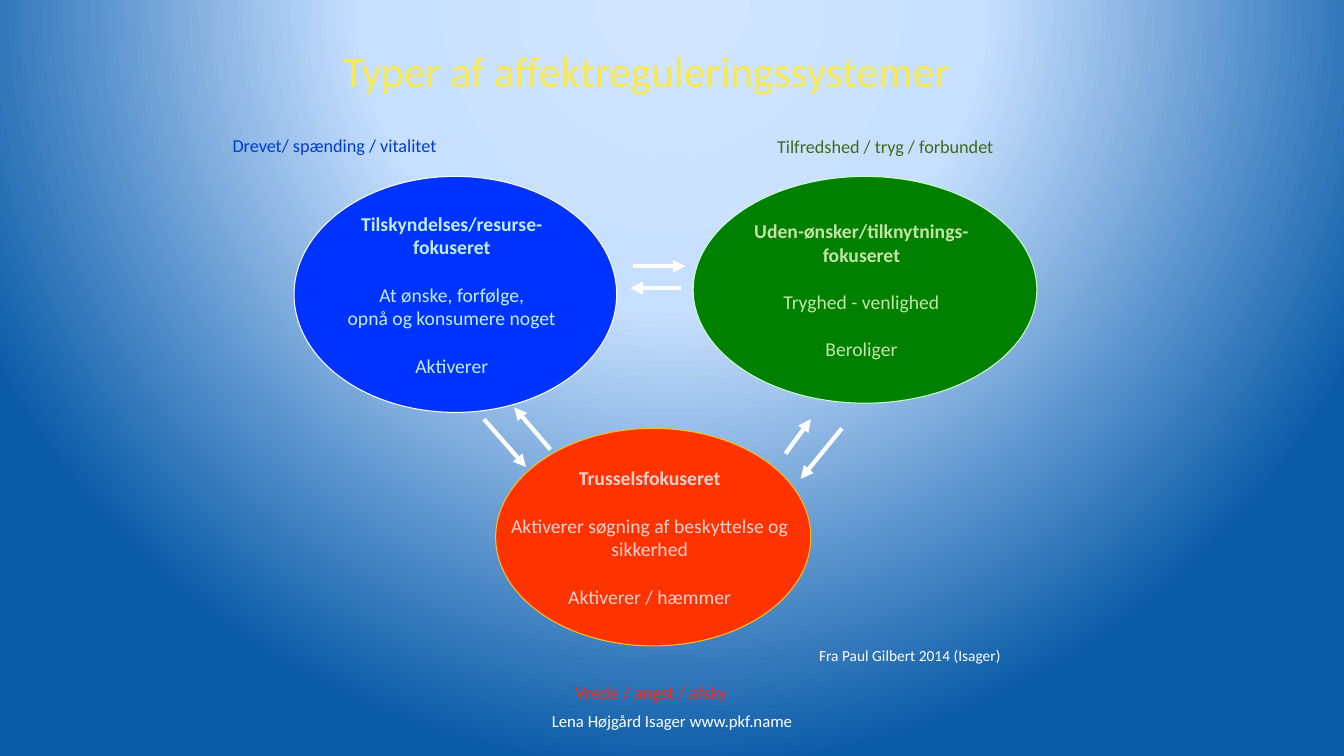
"""Build a slide of three affect regulation systems linked by arrows."""
from dataclasses import dataclass

from pptx import Presentation
from pptx.dml.color import RGBColor
from pptx.enum.shapes import MSO_CONNECTOR, MSO_SHAPE
from pptx.enum.text import MSO_ANCHOR, MSO_AUTO_SIZE, PP_ALIGN
from pptx.oxml import parse_xml
from pptx.oxml.ns import nsdecls
from pptx.oxml.xmlchemy import OxmlElement
from pptx.shapes.connector import Connector
from pptx.slide import Slide
from pptx.text.text import TextFrame, _Paragraph
from pptx.util import Inches, Pt

OVAL, STRAIGHT = MSO_SHAPE.OVAL, MSO_CONNECTOR.STRAIGHT
MIDDLE, TOP = MSO_ANCHOR.MIDDLE, MSO_ANCHOR.TOP
CENTER, LEFT = PP_ALIGN.CENTER, PP_ALIGN.LEFT
NO_FIT = MSO_AUTO_SIZE.NONE
CELL = Inches(1 / 12)


@dataclass(frozen=True)
class Theme:
    """Font, type sizes, line widths and colours."""
    font: str = "Calibri"
    title_size: int = 31
    body_size: int = 14
    label_size: int = 13
    footer_size: int = 12
    source_size: int = 11
    block_gap: int = 17
    outline: float = 0.75
    arrow: int = 3
    title: str = "F8E950"
    white: str = "FFFFFF"
    drive: str = "003DCC"
    content: str = "3F691E"
    threat: str = "FF2712"
    glow: tuple[tuple[int, str], ...] = ((0, "D1E5FF"), (40, "C8E0FF"), (100, "0B5CA8"))


@dataclass(frozen=True)
class Box:
    """A frame in grid cells."""
    col: float
    row: float
    cols: float
    rows: float

    def emu(self) -> tuple[int, int, int, int]:
        """Return left, top, width and height in EMU."""
        return tuple(round(v * CELL) for v in (self.col, self.row, self.cols, self.rows))


@dataclass(frozen=True)
class System:
    """An oval with a bold heading and blocks of lines."""
    box: Box
    fill: str
    line: str
    ink: str
    blocks: tuple[tuple[str, ...], ...]


@dataclass(frozen=True)
class Label:
    """A free line of text."""
    box: Box
    text: str
    size: int
    color: str
    align: PP_ALIGN = LEFT
    anchor: MSO_ANCHOR = TOP


@dataclass(frozen=True)
class Arrow:
    """An arrow between two grid points."""
    x1: float
    y1: float
    x2: float
    y2: float


T = Theme()
TITLE_BOX = Box(25.7, -2.2, 102, 21)
SYSTEMS = (
    System(Box(35, 21, 38.4, 28.1), "0033FF", "FFFFFF", "C0EDFE", (
        ("Tilskyndelses/resurse-", "fokuseret"),
        ("At ønske, forfølge,", "opnå og konsumere noget"),
        ("Aktiverer",))),
    System(Box(82.5, 21, 40.9, 27), "008000", "CCFFCC", "C2E5A6", (
        ("Uden-ønsker/tilknytnings-", "fokuseret"),
        ("Tryghed - venlighed",),
        ("Beroliger",))),
    System(Box(59, 51, 37.5, 25.9), "FF3300", "FBC01E", "FED1CF", (
        ("Trusselsfokuseret",),
        ("Aktiverer søgning af beskyttelse og", "sikkerhed"),
        ("Aktiverer / hæmmer",))),
)
ARROWS = (
    Arrow(75.4, 31.7, 81.6, 31.7), Arrow(81, 34.3, 75, 34.3),
    Arrow(100.2, 51, 95.3, 57), Arrow(93.5, 54, 96.5, 49.9),
    Arrow(65.5, 53.5, 61.2, 48.5), Arrow(57.6, 49.9, 62.6, 55.6),
)
LABELS = (
    Label(Box(97, 76.9, 24, 2.3), "Fra Paul Gilbert 2014 (Isager)", T.source_size, T.white),
    Label(Box(92, 16.1, 27.2, 2.6), "Tilfredshed / tryg / forbundet", T.label_size, T.content),
    Label(Box(27.2, 16, 25.8, 2.6), "Drevet/ spænding / vitalitet", T.label_size, T.drive),
    Label(Box(68, 81.1, 20, 2.6), "Vrede / angst / afsky", T.label_size, T.threat),
    Label(Box(54.7, 83.4, 50.6, 4.8), "Lena Højgård Isager www.pkf.name", T.footer_size,
          T.white, CENTER, MIDDLE),
)


def add_run(p: _Paragraph, text: str, size: int, color: str, bold: bool = False) -> None:
    """Append one formatted run."""
    r = p.add_run()
    r.text = text
    r.font.name, r.font.size, r.font.bold = T.font, Pt(size), bold
    r.font.color.rgb = RGBColor.from_string(color)


def set_frame(tf: TextFrame, anchor: MSO_ANCHOR, left: float, right: float, wrap: bool = True) -> None:
    """Set anchor, wrapping and side insets in inches."""
    tf.auto_size, tf.word_wrap, tf.vertical_anchor = NO_FIT, wrap, anchor
    tf.margin_left, tf.margin_right = Inches(left), Inches(right)
    tf.margin_top = tf.margin_bottom = 0


def set_background(s: Slide) -> None:
    """Give the slide a round glow from above."""
    stops = "".join(f'<a:gs pos="{pos * 1000}"><a:srgbClr val="{color}"/></a:gs>'
                    for pos, color in T.glow)
    bg = parse_xml(
        f'<p:bg {nsdecls("p", "a")}><p:bgPr><a:gradFill rotWithShape="1">'
        f'<a:gsLst>{stops}</a:gsLst><a:path path="circle">'
        '<a:fillToRect l="50000" t="-80000" r="50000" b="180000"/></a:path>'
        '</a:gradFill><a:effectLst/></p:bgPr></p:bg>')
    s.element.cSld.insert(0, bg)


def add_title(s: Slide, text: str) -> None:
    """Place and format the title."""
    sp = s.shapes.title
    sp.left, sp.top, sp.width, sp.height = TITLE_BOX.emu()
    tf = sp.text_frame
    set_frame(tf, MIDDLE, 0.14, 0.11)
    p = tf.paragraphs[0]
    p.alignment = CENTER
    add_run(p, text, T.title_size, T.title)


def add_system(s: Slide, system: System) -> None:
    """Draw one oval with its text."""
    sp = s.shapes.add_shape(OVAL, *system.box.emu())
    sp.shadow.inherit = False
    sp.fill.solid()
    sp.fill.fore_color.rgb = RGBColor.from_string(system.fill)
    sp.line.color.rgb = RGBColor.from_string(system.line)
    sp.line.width = Pt(T.outline)
    tf = sp.text_frame
    set_frame(tf, MIDDLE, 0.06, 0.13, wrap=False)
    for i, block in enumerate(system.blocks):
        for j, line in enumerate(block):
            p = tf.add_paragraph() if i or j else tf.paragraphs[0]
            p.alignment = CENTER
            if i and not j:
                p.space_before = Pt(T.block_gap)
            add_run(p, line, T.body_size, system.ink, bold=not i)


def add_arrow(s: Slide, arrow: Arrow) -> Connector:
    """Draw one white arrow."""
    points = (arrow.x1, arrow.y1, arrow.x2, arrow.y2)
    cx = s.shapes.add_connector(STRAIGHT, *(round(v * CELL) for v in points))
    cx.line.color.rgb = RGBColor.from_string(T.white)
    cx.line.width = Pt(T.arrow)
    tail = OxmlElement("a:tailEnd")
    tail.set("type", "triangle")
    cx.line._get_or_add_ln().append(tail)
    cx._element.spPr.append(OxmlElement("a:effectLst"))
    return cx


def add_label(s: Slide, label: Label) -> None:
    """Write one free line of text."""
    tf = s.shapes.add_textbox(*label.box.emu()).text_frame
    set_frame(tf, label.anchor, 0.04, 0.04)
    p = tf.paragraphs[0]
    p.alignment = label.align
    add_run(p, label.text, label.size, label.color)


def main() -> None:
    """Build and save the slide."""
    prs = Presentation()
    prs.slide_width, prs.slide_height = Inches(13.33), Inches(7.5)
    s = prs.slides.add_slide(prs.slide_layouts[5])
    set_background(s)
    add_title(s, "Typer af affektreguleringssystemer")
    for system in SYSTEMS:
        add_system(s, system)
    for arrow in ARROWS:
        add_arrow(s, arrow)
    for label in LABELS:
        add_label(s, label)
    prs.save("out.pptx")


if __name__ == "__main__":
    main()
